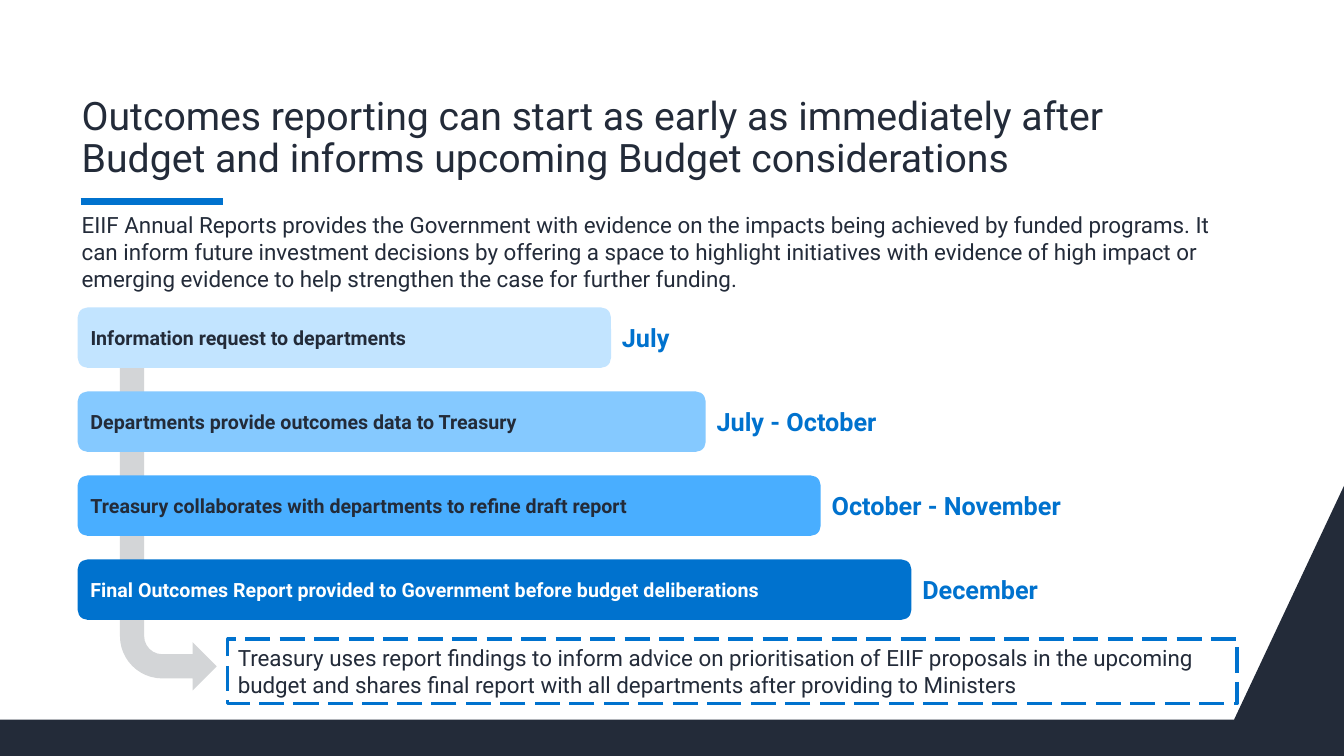
from lxml.etree import SubElement
from pptx import Presentation
from pptx.dml.color import RGBColor
from pptx.enum.dml import MSO_LINE
from pptx.enum.shapes import MSO_CONNECTOR, MSO_SHAPE
from pptx.enum.text import MSO_ANCHOR as Anchor, MSO_AUTO_SIZE as AutoSize, PP_ALIGN as Align
from pptx.oxml.ns import qn
from pptx.util import Inches, Pt

FONT = "Roboto"
COLORS = {
    "navy": "232B39", "blue": "0072CE", "sky": "49AEFF", "light": "85C9FF",
    "pale": "C2E4FF", "grey": "D3D5D7", "white": "FFFFFF",
}
STEPS = [
    ("Information request to departments", 5.29, "pale", "navy", "July", 0.88),
    ("Departments provide outcomes data to Treasury", 6.23, "light", "navy", "July - October", 2.14),
    ("Treasury collaborates with departments to refine draft report", 7.37, "sky", "navy",
     "October - November", 2.96),
    ("Final Outcomes Report provided to Government before budget deliberations", 8.27, "blue", "white",
     "December", 1.66),
]


def color(name):
    return RGBColor.from_string(COLORS[name])


def write(shape, text, size, text_color, bold=False, anchor=Anchor.TOP, side_inset=0.1):
    frame = shape.text_frame
    frame.word_wrap = True
    frame.auto_size = AutoSize.NONE
    frame.vertical_anchor = anchor
    frame.margin_left = frame.margin_right = Inches(side_inset)
    frame.margin_top = frame.margin_bottom = Inches(0.05)
    paragraph = frame.paragraphs[0]
    paragraph.alignment = Align.LEFT
    run = paragraph.add_run()
    run.text = text
    run.font.name = FONT
    run.font.size = Pt(size)
    run.font.bold = bold
    run.font.color.rgb = color(text_color)
    return paragraph


def add_box(slide, kind, left, top, width, height, fill=None):
    shape = slide.shapes.add_shape(kind, Inches(left), Inches(top), Inches(width), Inches(height))
    shape.shadow.inherit = False
    shape.line.fill.background()
    if fill:
        shape.fill.solid()
        shape.fill.fore_color.rgb = color(fill)
    else:
        shape.fill.background()
    return shape


def add_text(slide, left, top, width, height, text, size, text_color, **style):
    box = slide.shapes.add_textbox(Inches(left), Inches(top), Inches(width), Inches(height))
    write(box, text, size, text_color, **style)


def add_footer(slide, top, width, bottom):
    base = top + 2.32
    outline = [(0, base), (0, bottom), (width, bottom), (width, top), (width - 1.09, base)]
    points = [(Inches(x), Inches(y)) for x, y in outline]
    builder = slide.shapes.build_freeform(*points[0])
    builder.add_line_segments(points[1:], close=True)
    footer = builder.convert_to_shape()
    footer.shadow.inherit = False
    footer.fill.solid()
    footer.fill.fore_color.rgb = color("navy")
    footer.line.fill.background()


def add_heading(slide, left, top, width):
    title = slide.shapes.title
    title.left, title.top = Inches(left), Inches(top)
    title.width, title.height = Inches(width), Inches(1.13)
    paragraph = write(
        title,
        "Outcomes reporting can start as early as immediately after Budget "
        "and informs upcoming Budget considerations",
        28, "navy", anchor=Anchor.BOTTOM, side_inset=0.04)
    paragraph.line_spacing = 0.9

    rule_left, rule_top = Inches(left + 0.03), Inches(top + 1.28)
    rule = slide.shapes.add_connector(
        MSO_CONNECTOR.STRAIGHT, rule_left, rule_top, rule_left + Inches(1.41), rule_top)
    rule.line.color.rgb = color("blue")
    rule.line.width = Pt(4.5)
    SubElement(rule.element.spPr, qn("a:effectLst"))

    add_text(
        slide, left, top + 1.33, width, 0.8,
        "EIIF Annual Reports provides the Government with evidence on the impacts being achieved "
        "by funded programs. It can inform future investment decisions by offering a space to "
        "highlight initiatives with evidence of high impact or emerging evidence to help "
        "strengthen the case for further funding.",
        16, "navy", side_inset=0.04)


def add_timeline(slide, left, top, height):
    arrow = add_box(slide, MSO_SHAPE.BENT_ARROW, left + 0.42, top + 0.45, 0.96, 3.35, "grey")
    arrow.rotation = 180
    arrow.element.spPr.xfrm.set("flipH", "1")

    bar_height = 0.6
    pitch = (height - bar_height) / (len(STEPS) - 1)
    for index, (label, width, fill, text_color, month, month_width) in enumerate(STEPS):
        bar_top = top + index * pitch
        bar = add_box(slide, MSO_SHAPE.ROUNDED_RECTANGLE, left, bar_top, width, bar_height, fill)
        write(bar, label, 14, text_color, bold=True, anchor=Anchor.MIDDLE)
        add_text(slide, left + width + 0.01, bar_top + 0.1, month_width, 0.4,
                 month, 18, "blue", bold=True)


def add_conclusion(slide, left, top, width, height):
    box = add_box(slide, MSO_SHAPE.RECTANGLE, left, top, width, height)
    box.line.color.rgb = color("blue")
    box.line.width = Pt(2.25)
    box.line.dash_style = MSO_LINE.LONG_DASH
    write(
        box,
        "Treasury uses report findings to inform advice on prioritisation of EIIF proposals in the "
        "upcoming budget and shares final report with all departments after providing to Ministers",
        16, "navy")


def main():
    presentation = Presentation()
    presentation.slide_width = Inches(13.33)
    presentation.slide_height = Inches(7.5)
    slide = presentation.slides.add_slide(presentation.slide_layouts[5])
    add_footer(slide, 4.82, 13.33, 7.5)
    add_heading(slide, 0.77, 0.72, 11.5)
    add_timeline(slide, 0.77, 3.05, 3.1)
    add_conclusion(slide, 2.26, 6.34, 10.01, 0.64)
    presentation.save("out.pptx")


if __name__ == "__main__":
    main()
